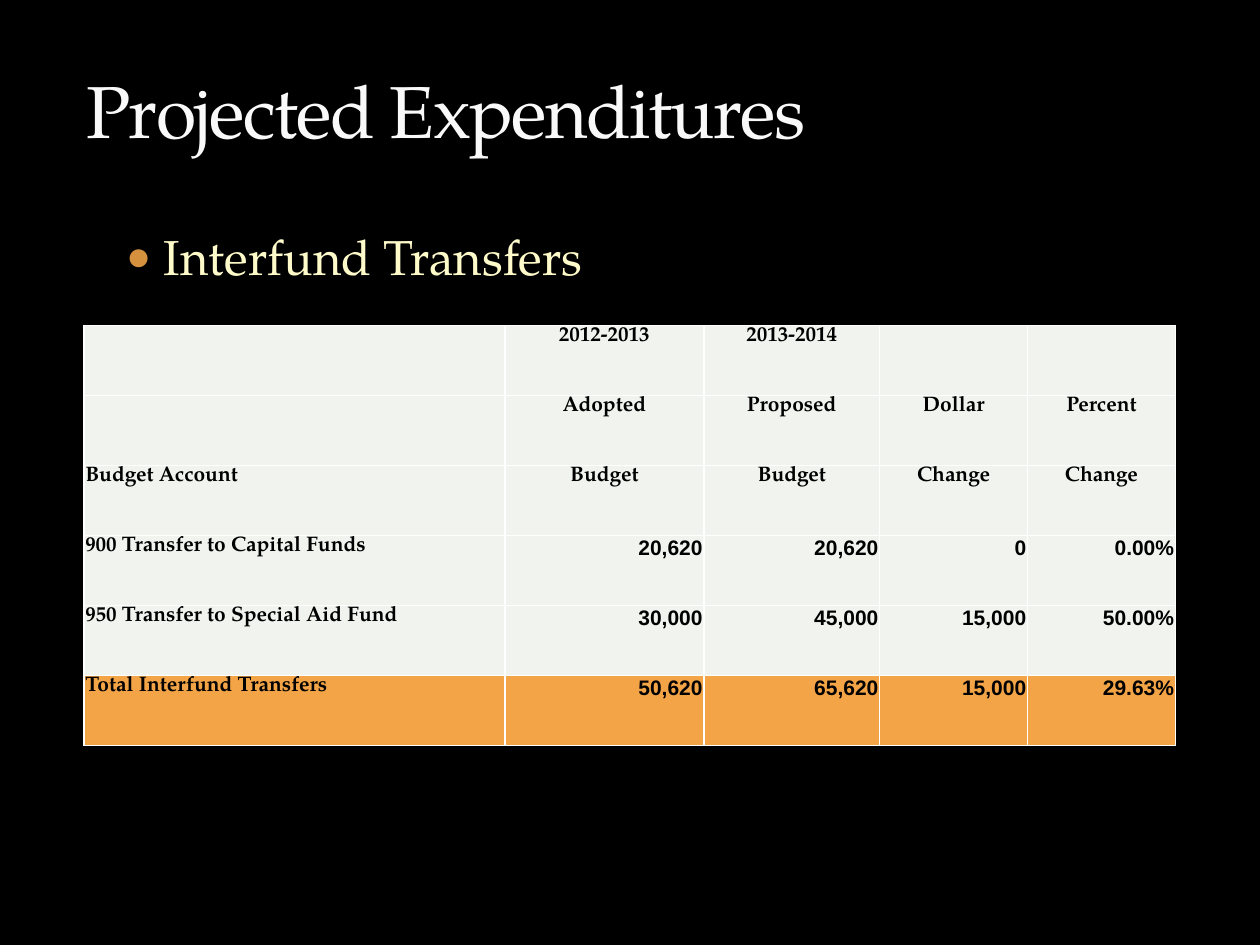
from lxml.etree import SubElement
from pptx import Presentation
from pptx.dml.color import RGBColor
from pptx.enum.text import MSO_ANCHOR, PP_ALIGN
from pptx.oxml.ns import qn
from pptx.util import Pt

BLACK = RGBColor(0x00, 0x00, 0x00)
WHITE = RGBColor(0xFF, 0xFF, 0xFF)
TITLE = RGBColor(0xF9, 0xF9, 0xF9)
CREAM = RGBColor(0xFE, 0xFA, 0xC9)
BULLET = RGBColor(0xD6, 0x91, 0x3F)
PALE = RGBColor(0xF0, 0xF3, 0xEE)
ORANGE = RGBColor(0xF3, 0xA4, 0x47)
SERIF = "TeX Gyre Pagella"
SANS = "Arial"

COLS = [240.5, 113.75, 100.5, 84.5, 84.5]
ROW_H = 40
HEADER_ROWS = 3
ROWS = [
    ["", "2012-2013", "2013-2014", "", ""],
    ["", "Adopted", "Proposed", "Dollar", "Percent"],
    ["Budget Account", "Budget", "Budget", "Change", "Change"],
    ["900 Transfer to Capital Funds", "20,620", "20,620", "0", "0.00%"],
    ["950 Transfer to Special Aid Fund", "30,000", "45,000", "15,000", "50.00%"],
    ["Total Interfund Transfers", "50,620", "65,620", "15,000", "29.63%"],
]


def write(tf, text, size=12, font=SERIF, color=BLACK, bold=False,
          align=PP_ALIGN.LEFT, spacing=None):
    """Write one formatted paragraph and return it."""
    p = tf.paragraphs[0]
    p.alignment = align
    r = p.add_run()
    r.text = text
    r.font.size, r.font.name, r.font.bold = Pt(size), font, bold
    r.font.color.rgb = color
    if spacing is not None:
        r.font._element.set("spc", str(int(spacing * 100)))
    return p


def place(sp, left, top, width, height):
    """Move and size a shape, in points."""
    sp.left, sp.top, sp.width, sp.height = map(Pt, (left, top, width, height))


def add_bullet(p, char, color, percent, left, hanging):
    """Give a paragraph a coloured bullet with a hanging indent."""
    pPr = p._p.get_or_add_pPr()
    pPr.set("marL", str(Pt(left)))
    pPr.set("indent", str(-Pt(hanging)))
    clr = SubElement(pPr, qn("a:buClr"))
    SubElement(clr, qn("a:srgbClr"), val=str(color))
    SubElement(pPr, qn("a:buSzPct"), val=str(percent * 1000))
    SubElement(pPr, qn("a:buFont"), typeface=SANS)
    SubElement(pPr, qn("a:buChar"), char=char)


def style_cell(cell, fill):
    """Set the margins, thin borders and fill of a cell."""
    cell.margin_left = cell.margin_right = cell.margin_top = Pt(0.75)
    cell.margin_bottom = 0
    tcPr = cell._tc.get_or_add_tcPr()
    for side in ("lnL", "lnR", "lnT", "lnB"):
        ln = SubElement(tcPr, qn(f"a:{side}"), w=str(Pt(1)))
        clr = SubElement(ln, qn("a:solidFill"))
        SubElement(clr, qn("a:srgbClr"), val=str(WHITE))
    cell.fill.solid()
    cell.fill.fore_color.rgb = fill


def add_budget_table(s):
    """Add the budget table with its header, account and total rows."""
    frame = s.shapes.add_table(len(ROWS), len(COLS), Pt(48), Pt(186),
                               Pt(sum(COLS)), Pt(ROW_H * len(ROWS)))
    table = frame.table
    for col, width in zip(table.columns, COLS):
        col.width = Pt(width)
    for i, values in enumerate(ROWS):
        table.rows[i].height = Pt(ROW_H)
        for j, text in enumerate(values):
            cell = table.cell(i, j)
            style_cell(cell, ORANGE if i == len(ROWS) - 1 else PALE)
            if not text:
                continue
            if j == 0:
                font, align = SERIF, PP_ALIGN.LEFT
            elif i < HEADER_ROWS:
                font, align = SERIF, PP_ALIGN.CENTER
            else:
                font, align = SANS, PP_ALIGN.RIGHT
            write(cell.text_frame, text, font=font, bold=True, align=align)


def main():
    """Build the slide and save it."""
    prs = Presentation()
    prs.slide_width, prs.slide_height = Pt(720), Pt(540)
    s = prs.slides.add_slide(prs.slide_layouts[1])
    s.background.fill.solid()
    s.background.fill.fore_color.rgb = BLACK

    body = s.placeholders[1]
    place(body, 36, 126, 648, 402)
    p = write(body.text_frame, "Interfund Transfers", size=28, color=CREAM)
    p.level = 1
    p.space_before = Pt(3)
    add_bullet(p, "●", BULLET, 85, left=50.4, hanging=21.6)

    title = s.shapes.title
    place(title, 42, 30, 648, 61)
    title.text_frame.vertical_anchor = MSO_ANCHOR.BOTTOM
    write(title.text_frame, "Projected Expenditures", size=42, color=TITLE,
          spacing=-1)

    add_budget_table(s)
    prs.save("out.pptx")


if __name__ == "__main__":
    main()
